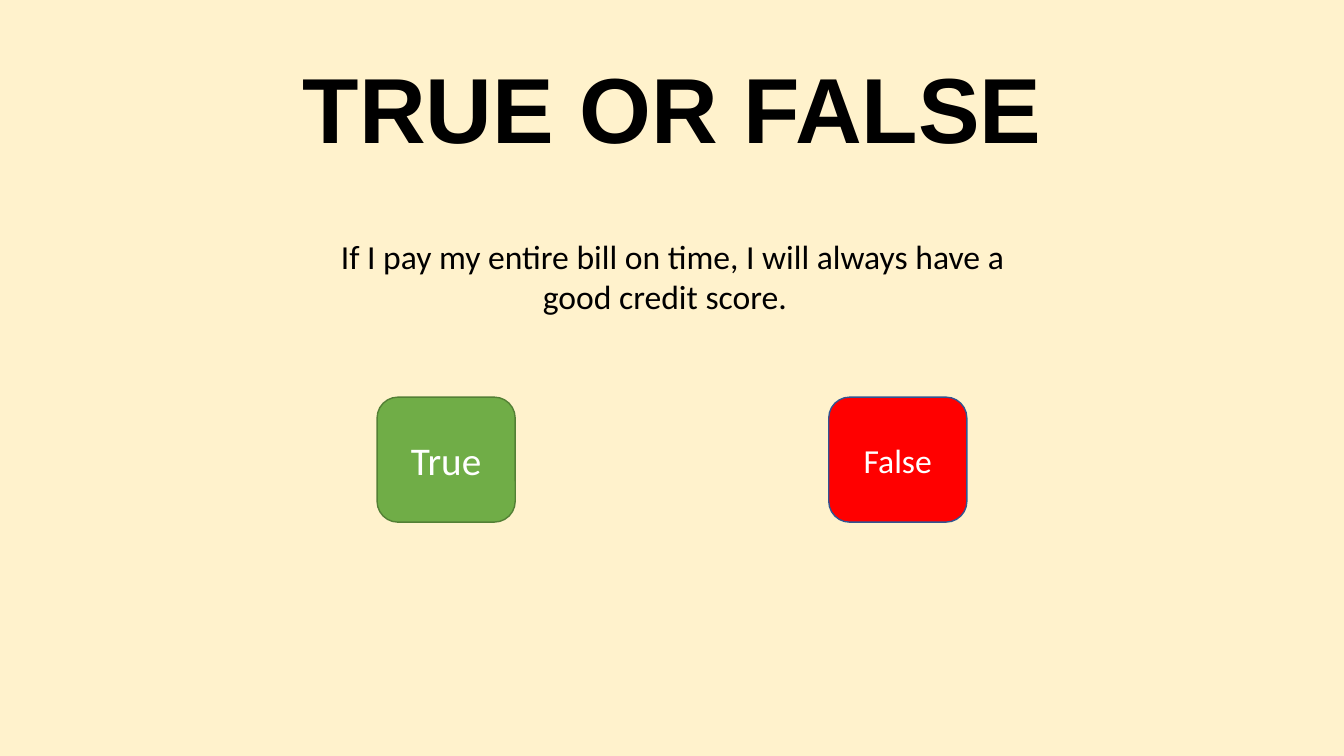
from dataclasses import dataclass

from pptx import Presentation
from pptx.dml.color import RGBColor
from pptx.enum import shapes, text
from pptx.util import Inches, Pt


@dataclass(frozen=True)
class Theme:
    back: str = "FFF2CC"
    ink: str = "000000"
    white: str = "FFFFFF"
    green: str = "70AD47"
    moss: str = "538035"
    red: str = "FF0000"
    navy: str = "325491"
    head: str = "Arial"
    body: str = "Calibri"
    huge: int = 66
    large: int = 28
    base: int = 24


theme = Theme()

TITLE = "TRUE OR FALSE"
CLAIM = "If I pay my entire bill on time, I will always have a good credit score.  "
# label, side of the centre line, fill, outline, type size
ANSWERS = [
    ("False", 1, theme.red, theme.navy, theme.base),
    ("True", -1, theme.green, theme.moss, theme.large),
]

WIDTH, HEIGHT = 13.33, 7.5
BUTTON_W, BUTTON_H, BUTTON_TOP = 1.37, 1.24, 3.94
REACH = 2.24  # from the centre line to a button's centre


def color(code):
    return RGBColor.from_string(code)


def place(shape, left, top, width, height):
    shape.left, shape.top = Inches(left), Inches(top)
    shape.width, shape.height = Inches(width), Inches(height)


def write(shape, words, size=theme.base, font=theme.body, ink=theme.ink,
          bold=False, anchor=text.MSO_ANCHOR.MIDDLE, spacing=1.0):
    frame = shape.text_frame
    frame.word_wrap = True
    frame.auto_size = text.MSO_AUTO_SIZE.NONE
    frame.vertical_anchor = anchor
    para = frame.paragraphs[0]
    para.alignment = text.PP_ALIGN.CENTER
    para.line_spacing = spacing
    run = para.add_run()
    run.text = words
    run.font.name, run.font.size, run.font.bold = font, Pt(size), bold
    run.font.color.rgb = color(ink)


def add_button(group, label, side, fill, line, size):
    left = WIDTH / 2 + side * REACH - BUTTON_W / 2
    box = [Inches(n) for n in (left, BUTTON_TOP, BUTTON_W, BUTTON_H)]
    button = group.shapes.add_shape(shapes.MSO_SHAPE.ROUNDED_RECTANGLE, *box)
    button.shadow.inherit = False
    button.fill.solid()
    button.fill.fore_color.rgb = color(fill)
    button.line.color.rgb = color(line)
    button.line.width = Pt(1)
    write(button, label, size=size, ink=theme.white)


def main():
    deck = Presentation()
    deck.slide_width, deck.slide_height = Inches(WIDTH), Inches(HEIGHT)
    slide = deck.slides.add_slide(deck.slide_layouts.get_by_name("Title Only"))
    slide.background.fill.solid()
    slide.background.fill.fore_color.rgb = color(theme.back)

    title = slide.shapes.title
    place(title, 0.92, 0.4, 11.5, 1.45)
    write(title, TITLE, size=theme.huge, font=theme.head, bold=True, spacing=0.9)

    claim = slide.shapes.add_textbox(0, 0, 0, 0)
    place(claim, 2.96, 2.29, 7.42, 0.91)
    write(claim, CLAIM, anchor=text.MSO_ANCHOR.TOP)

    group = slide.shapes.add_group_shape()
    for answer in ANSWERS:
        add_button(group, *answer)

    deck.save("out.pptx")


if __name__ == "__main__":
    main()
